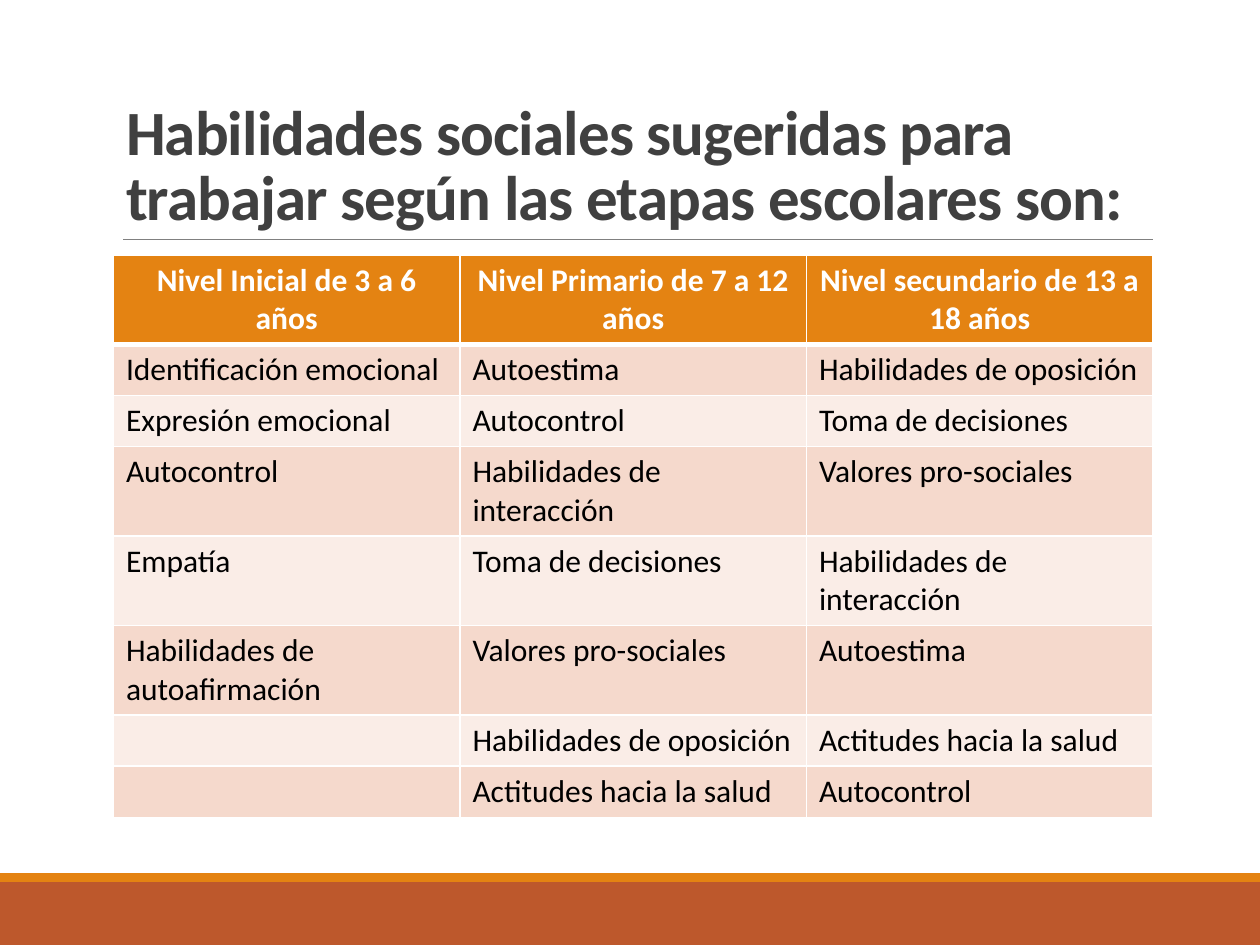
"""Build a slide with a table of social skills suggested for each school stage."""
from dataclasses import dataclass

from lxml.etree import SubElement
from pptx import Presentation
from pptx.dml.color import RGBColor
from pptx.enum.shapes import MSO_CONNECTOR, MSO_SHAPE
from pptx.enum.text import MSO_ANCHOR, MSO_AUTO_SIZE, PP_ALIGN
from pptx.oxml.ns import qn
from pptx.slide import Slide
from pptx.table import _Cell
from pptx.text.text import TextFrame
from pptx.util import Pt

SLIDE_WIDTH, SLIDE_HEIGHT = 720, 540
TABLE_LEFT, TABLE_TOP, TABLE_WIDTH = 64.8, 145.6, 594
ROW_HEIGHT = 29.2
ORANGE, WHITE = "E48312", "FFFFFF"
ROW_FILLS = ("F5D9CC", "FAEDE7")
TITLE = "Habilidades sociales sugeridas para trabajar según las etapas escolares son:"


@dataclass(frozen=True)
class Band:
    top: float
    height: float
    color: str


@dataclass(frozen=True)
class Stage:
    heading: str
    skills: tuple[str, ...]


BANDS = (Band(504, 36, "BD582C"), Band(499, 5, ORANGE))
STAGES = (
    Stage("Nivel Inicial de 3 a 6 años", (
        "Identificación emocional", "Expresión emocional", "Autocontrol",
        "Empatía", "Habilidades de autoafirmación")),
    Stage("Nivel Primario de 7 a 12 años", (
        "Autoestima", "Autocontrol", "Habilidades de interacción",
        "Toma de decisiones", "Valores pro-sociales",
        "Habilidades de oposición", "Actitudes hacia la salud")),
    Stage("Nivel secundario de 13 a 18 años", (
        "Habilidades de oposición", "Toma de decisiones", "Valores pro-sociales",
        "Habilidades de interacción", "Autoestima",
        "Actitudes hacia la salud", "Autocontrol")),
)


def rgb(color: str) -> RGBColor:
    return RGBColor.from_string(color)


def write(frame: TextFrame, text: str, *, size: float = 18, color: str = "000000",
          bold: bool = False, align: PP_ALIGN = PP_ALIGN.LEFT,
          line_spacing: float = 1.0, tracking: float = 0) -> None:
    para = frame.paragraphs[0]
    para.alignment = align
    para.line_spacing = line_spacing
    span = para.add_run()
    span.text = text
    span.font.name = "Calibri"
    span.font.size = Pt(size)
    span.font.bold = bold
    span.font.color.rgb = rgb(color)
    if tracking:
        span.font._element.set("spc", str(round(tracking * 100)))


def draw_band(page: Slide, band: Band) -> None:
    box = page.shapes.add_shape(MSO_SHAPE.RECTANGLE, 0, Pt(band.top),
                                Pt(SLIDE_WIDTH), Pt(band.height))
    box.shadow.inherit = False
    box.fill.solid()
    box.fill.fore_color.rgb = rgb(band.color)
    box.line.fill.background()


def draw_rule(page: Slide) -> None:
    rule = page.shapes.add_connector(MSO_CONNECTOR.STRAIGHT, Pt(70.5), Pt(136.8),
                                     Pt(658.8), Pt(136.8))
    rule.line.color.rgb = rgb("808080")
    rule.line.width = Pt(0.5)
    SubElement(rule._element.spPr, qn("a:effectLst"))


def draw_title(page: Slide) -> None:
    title = page.shapes.title
    title.left, title.top = Pt(64.8), Pt(22.3)
    title.width, title.height = Pt(594), Pt(114.5)
    frame = title.text_frame
    frame.word_wrap = True
    frame.auto_size = MSO_AUTO_SIZE.NONE
    frame.vertical_anchor = MSO_ANCHOR.BOTTOM
    write(frame, TITLE, size=36, color="404040", bold=True,
          line_spacing=0.85, tracking=-0.5)


def style_cell(cell: _Cell, color: str, top: float, bottom: float) -> None:
    properties = cell._tc.get_or_add_tcPr()
    for side, width in (("L", 1), ("R", 1), ("T", top), ("B", bottom)):
        border = SubElement(properties, qn(f"a:ln{side}"), w=str(Pt(width)))
        fill = SubElement(border, qn("a:solidFill"))
        SubElement(fill, qn("a:srgbClr"), val=WHITE)
    cell.fill.solid()
    cell.fill.fore_color.rgb = rgb(color)


def draw_table(page: Slide) -> None:
    row_count = 1 + max(len(stage.skills) for stage in STAGES)
    table = page.shapes.add_table(row_count, len(STAGES), Pt(TABLE_LEFT), Pt(TABLE_TOP),
                                  Pt(TABLE_WIDTH), Pt(ROW_HEIGHT * row_count)).table
    for row in table.rows:
        row.height = Pt(ROW_HEIGHT)
    for column, stage in enumerate(STAGES):
        heading = table.cell(0, column)
        style_cell(heading, ORANGE, top=1, bottom=3)
        write(heading.text_frame, stage.heading, color=WHITE, bold=True,
              align=PP_ALIGN.CENTER)
        for row in range(1, row_count):
            cell = table.cell(row, column)
            style_cell(cell, ROW_FILLS[(row - 1) % 2], top=3 if row == 1 else 1, bottom=1)
            if row <= len(stage.skills):
                write(cell.text_frame, stage.skills[row - 1])


def main() -> None:
    deck = Presentation()
    deck.slide_width, deck.slide_height = Pt(SLIDE_WIDTH), Pt(SLIDE_HEIGHT)
    page = deck.slides.add_slide(deck.slide_layouts.get_by_name("Title Only"))
    for band in BANDS:
        draw_band(page, band)
    draw_rule(page)
    draw_title(page)
    draw_table(page)
    deck.save("out.pptx")


if __name__ == "__main__":
    main()
